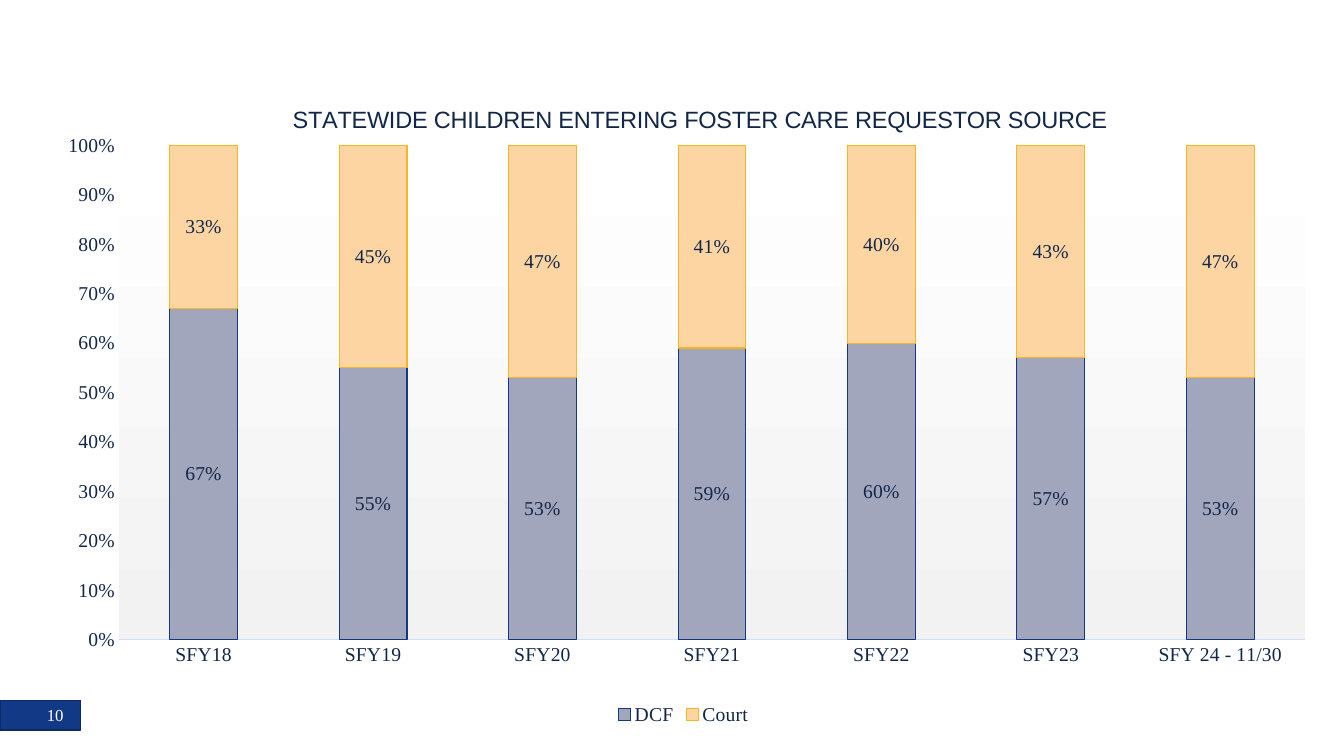
import pptx
import pptx.util
import pptx.oxml
import pptx.chart.data
import pptx.dml.color
import pptx.enum.chart
import pptx.enum.shapes
import pptx.enum.text

Pt = pptx.util.Pt
HUE = {
    "ink": "122649", "white": "FFFFFF", "gray": "F2F2F2",
    "tab": "123985", "edge": "0D2A62", "axis": "D0DDF9",
    "dcf": "A2A6BC", "navy": "123882",
    "court": "FCD5A3", "gold": "F4B526",
}
SERIF = "Times New Roman"
YEARS = ["SFY18", "SFY19", "SFY20", "SFY21", "SFY22", "SFY23", "SFY 24 - 11/30"]
# Name, values, fill, outline
BARS = [
    ("DCF", [0.67, 0.55, 0.53, 0.59, 0.6, 0.57, 0.53], "dcf", "navy"),
    ("Court", [0.33, 0.45, 0.47, 0.41, 0.4, 0.43, 0.47], "court", "gold"),
]
NS = ('xmlns:c="http://schemas.openxmlformats.org/drawingml/2006/chart" '
      'xmlns:a="http://schemas.openxmlformats.org/drawingml/2006/main"')


def color(name):
    return pptx.dml.color.RGBColor.from_string(HUE[name])


def style(font, size=14, face=SERIF, hue="ink", bold=False):
    font.size, font.name, font.bold = Pt(size), face, bold
    font.color.rgb = color(hue)


def write(frame, text, align=pptx.enum.text.PP_ALIGN.CENTER, **look):
    para = frame.paragraphs[0]
    para.alignment = align
    run = para.add_run()
    run.text = text
    style(run.font, **look)


def paint(form, fill, line, width):
    form.fill.solid()
    form.fill.fore_color.rgb = color(fill)
    form.line.color.rgb = color(line)
    form.line.width = Pt(width)


def layout(x, y, w=None, h=None):
    """Manual chart layout, as fractions of the chart."""
    inner = '<c:layoutTarget val="inner"/>' if w else ""
    sizes = f'<c:w val="{w}"/><c:h val="{h}"/>' if w else ""
    return pptx.oxml.parse_xml(
        f'<c:layout {NS}><c:manualLayout>{inner}<c:xMode val="edge"/>'
        f'<c:yMode val="edge"/><c:x val="{x}"/><c:y val="{y}"/>{sizes}'
        '</c:manualLayout></c:layout>')


def place(part, box):
    """Swap the layout of a title or plot area for a manual one."""
    for old in part.findall(pptx.oxml.ns.qn("c:layout")):
        part.remove(old)
    text = part.find(pptx.oxml.ns.qn("c:tx"))
    part.insert(0 if text is None else 1, box)


def shade(plot):
    plot.append(pptx.oxml.parse_xml(
        f'<c:spPr {NS}><a:gradFill><a:gsLst>'
        f'<a:gs pos="0"><a:srgbClr val="{HUE["white"]}"/></a:gs>'
        f'<a:gs pos="100000"><a:srgbClr val="{HUE["gray"]}"/></a:gs>'
        '</a:gsLst><a:lin ang="5400000" scaled="0"/></a:gradFill>'
        '<a:ln><a:noFill/></a:ln></c:spPr>'))


def add_page(slide, number):
    tab = slide.shapes.add_shape(
        pptx.enum.shapes.MSO_SHAPE.RECTANGLE, Pt(0), Pt(500.4), Pt(57.6), Pt(21))
    tab.shadow.inherit = False
    paint(tab, "tab", "edge", 0.85)
    box = slide.shapes.add_textbox(Pt(16.5), Pt(500.4), Pt(36), Pt(21))
    frame = box.text_frame
    frame.word_wrap = True
    frame.vertical_anchor = pptx.enum.text.MSO_ANCHOR.MIDDLE
    write(frame, number, align=pptx.enum.text.PP_ALIGN.RIGHT, size=12, hue="white")


def set_axes(chart):
    for axis in (chart.category_axis, chart.value_axis):
        axis.major_tick_mark = pptx.enum.chart.XL_TICK_MARK.NONE
        axis.minor_tick_mark = pptx.enum.chart.XL_TICK_MARK.NONE
        axis.has_major_gridlines = False
        style(axis.tick_labels.font)
    base = chart.category_axis.format.line
    base.color.rgb = color("axis")
    base.width = Pt(0.75)
    chart.value_axis.format.line.fill.background()
    marks = chart.value_axis.tick_labels
    marks.number_format, marks.number_format_is_linked = "0%", False


def set_bars(chart):
    plot = chart.plots[0]
    plot.gap_width, plot.overlap = 150, 100
    plot.vary_by_categories = False
    for bar, (_, _, fill, line) in zip(plot.series, BARS):
        paint(bar.format, fill, line, 0.75)
        tags = bar.data_labels
        tags.show_value = True
        tags.number_format, tags.number_format_is_linked = "0%", False
        tags.position = pptx.enum.chart.XL_LABEL_POSITION.CENTER
        style(tags.font)


def add_bars(slide):
    data = pptx.chart.data.CategoryChartData(number_format="0%")
    data.categories = YEARS
    for name, values, _, _ in BARS:
        data.add_series(name, values)
    chart = slide.shapes.add_chart(
        pptx.enum.chart.XL_CHART_TYPE.COLUMN_STACKED_100,
        Pt(33.1), Pt(62.6), Pt(910), Pt(458.6), data).chart
    style(chart.font)
    set_axes(chart)
    set_bars(chart)

    # Title and legend
    chart.has_title = True
    title = chart.chart_title
    title.include_in_layout = False
    write(title.text_frame, "STATEWIDE CHILDREN ENTERING FOSTER CARE REQUESTOR SOURCE",
          size=16.8, face="Arial")
    place(title._element, layout(0.19, 0.02))
    chart.has_legend = True
    chart.legend.position = pptx.enum.chart.XL_LEGEND_POSITION.BOTTOM
    chart.legend.include_in_layout = False
    style(chart.legend.font)

    # Plot area
    plot = chart._chartSpace.chart.plotArea
    place(plot, layout(0.057, 0.09, 0.931, 0.77))
    shade(plot)


def main():
    deck = pptx.Presentation()
    deck.slide_width, deck.slide_height = Pt(960), Pt(540)
    slide = deck.slides.add_slide(deck.slide_layouts[6])
    add_page(slide, "10")
    add_bars(slide)
    deck.save("out.pptx")


if __name__ == "__main__":
    main()
